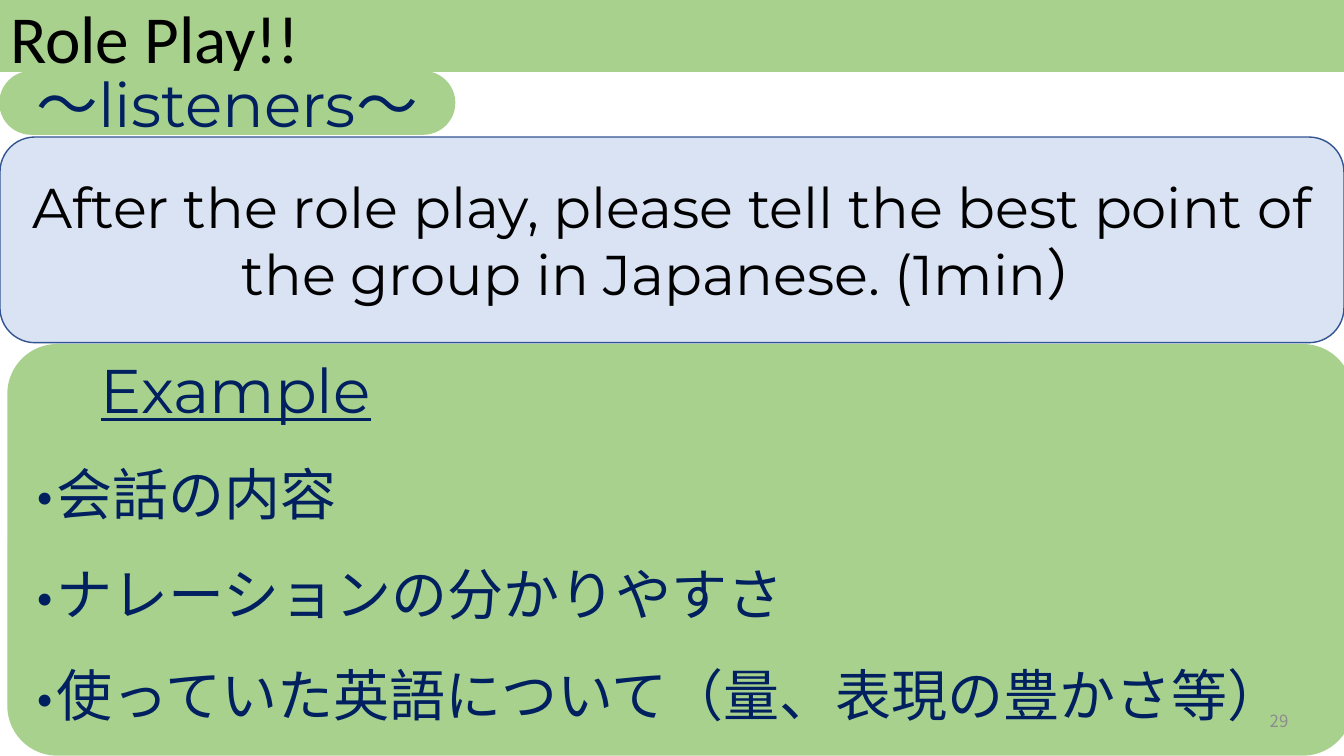
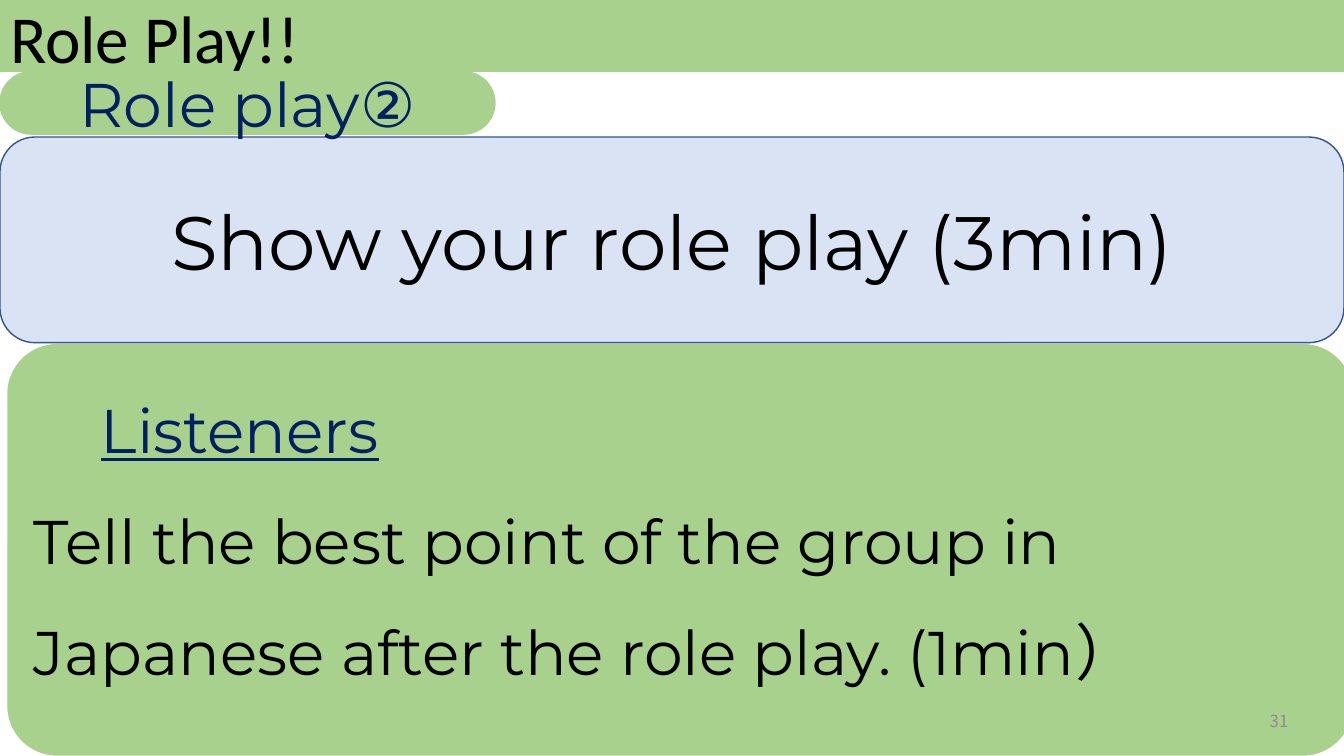
from dataclasses import dataclass

from lxml.etree import SubElement
from pptx import Presentation
from pptx.dml.color import RGBColor
from pptx.enum.shapes import MSO_SHAPE
from pptx.enum.text import MSO_ANCHOR, MSO_AUTO_SIZE, PP_ALIGN
from pptx.oxml.ns import qn
from pptx.util import Inches, Pt


@dataclass(frozen=True)
class Theme:
    green: str = "A9D18E"
    pale_blue: str = "DAE3F3"
    border_blue: str = "325491"
    navy: str = "002060"
    black: str = "000000"
    grey: str = "8C8C8C"
    title_font: str = "Calibri"
    text_font: str = "Montserrat"
    japanese_font: str = "Noto Sans CJK JP"
    title: int = 48
    heading: int = 44
    statement: int = 54
    text: int = 40
    number: int = 12


THEME = Theme()
WIDTH, HEIGHT = Inches(13.33), Inches(7.5)


@dataclass(frozen=True)
class Box:
    left: int
    top: int
    width: int
    height: int

    def inner(self, x, y, w, h):
        """Return an inner box given in percent of this box."""
        return Box(int(self.left + self.width * x / 100),
                   int(self.top + self.height * y / 100),
                   int(self.width * w / 100), int(self.height * h / 100))

    def corners(self):
        return self.left, self.top, self.width, self.height


PAGE = Box(0, 0, WIDTH, HEIGHT)
TITLE_BAND = PAGE.inner(0, 0, 100, 9.47)
TAB_ROW = PAGE.inner(0, 9.47, 100, 8.27)
TASK_BOX = PAGE.inner(0, 18.13, 100, 27.2)
DETAIL_PANEL = PAGE.inner(0.6, 45.6, 100, 54.27)
PAGE_NUMBER = PAGE.inner(74.1, 92.67, 22.5, 5.33)


def color(code):
    return RGBColor.from_string(code)


def paint(shape, fill, border):
    shape.fill.solid()
    shape.fill.fore_color.rgb = color(fill)
    shape.line.color.rgb = color(border)
    shape.line.width = Pt(1)


def style(paragraph, size, ink, font=THEME.text_font, align=PP_ALIGN.LEFT):
    paragraph.alignment = align
    paragraph.font.size = Pt(size)
    paragraph.font.color.rgb = color(ink)
    paragraph.font.name = font
    default_font = paragraph._p.get_or_add_pPr().find(qn("a:defRPr"))
    SubElement(default_font, qn("a:ea"), typeface=THEME.japanese_font)


def indent(paragraph, left, bullet=None):
    """Set the left indent, with a hanging bullet if one is given."""
    props = paragraph._p.get_or_add_pPr()
    props.set("marL", str(left))
    props.set("indent", str(-left if bullet else 0))
    default_font = props.find(qn("a:defRPr"))
    if bullet:
        marks = [SubElement(props, qn("a:buSzPct"), val="140000"),
                 SubElement(props, qn("a:buFont"), typeface=THEME.text_font),
                 SubElement(props, qn("a:buChar"), char=bullet)]
    else:
        marks = [SubElement(props, qn("a:buNone"))]
    for mark in marks:
        default_font.addprevious(mark)


def place(placeholder, box, anchor):
    placeholder.left, placeholder.top, placeholder.width, placeholder.height = box.corners()
    frame = placeholder.text_frame
    frame.auto_size = MSO_AUTO_SIZE.NONE
    frame.word_wrap = True
    frame.vertical_anchor = anchor
    return frame


def add_rounded(slide, box, fill, border, corner):
    shape = slide.shapes.add_shape(MSO_SHAPE.ROUNDED_RECTANGLE, *box.corners())
    shape.adjustments[0] = corner
    shape.shadow.inherit = False
    paint(shape, fill, border)
    return shape


def add_label(slide, box, text, size, ink, fill, border, corner):
    """Rounded box with centred text."""
    frame = add_rounded(slide, box, fill, border, corner).text_frame
    frame.word_wrap = True
    frame.vertical_anchor = MSO_ANCHOR.MIDDLE
    frame.text = text
    style(frame.paragraphs[0], size, ink, align=PP_ALIGN.CENTER)


def add_title(slide, box, text):
    title = slide.shapes.title
    frame = place(title, box, MSO_ANCHOR.TOP)
    paint(title, THEME.green, THEME.green)
    frame.text = text
    heading = frame.paragraphs[0]
    style(heading, THEME.title, THEME.black, THEME.title_font)
    heading.line_spacing = 0.9


def add_details(slide, box, heading, lines, ink, size, bullet):
    """Green panel with an underlined heading and its lines."""
    panel = add_rounded(slide, box, THEME.green, THEME.green, 0.12)
    body = slide.placeholders[1]
    body._element.addprevious(panel._element)
    frame = place(body, box.inner(1.9, 0, 96.2, 96), MSO_ANCHOR.MIDDLE)
    frame.margin_left = frame.margin_right = frame.margin_top = frame.margin_bottom = 0
    frame.text = "\n".join([heading, *lines])
    first, *rest = frame.paragraphs

    style(first, THEME.heading, THEME.navy)
    first.font.underline = True
    first.line_spacing = Pt(50)
    indent(first, int(box.width * 0.05))
    for line in rest:
        style(line, size, ink)
        line.line_spacing = Pt(size * 1.8)
        indent(line, int(box.width * 0.014) if bullet else 0, bullet)
    for paragraph in frame.paragraphs:
        paragraph.space_before = Pt(0)


def add_page_number(slide, box, number):
    frame = slide.shapes.add_textbox(*box.corners()).text_frame
    frame.word_wrap = True
    frame.vertical_anchor = MSO_ANCHOR.MIDDLE
    frame.text = number
    style(frame.paragraphs[0], THEME.number, THEME.grey, THEME.japanese_font, PP_ALIGN.RIGHT)


def add_activity(deck, tab, tab_share, task, task_size, details, number):
    slide = deck.slides.add_slide(deck.slide_layouts[1])
    add_title(slide, TITLE_BAND, "Role Play!!")
    add_label(slide, TASK_BOX, task, task_size, THEME.black,
              THEME.pale_blue, THEME.border_blue, 0.17)
    add_label(slide, TAB_ROW.inner(0, 0, tab_share, 100), tab, THEME.heading,
              THEME.navy, THEME.green, THEME.green, 0.5)
    add_details(slide, DETAIL_PANEL, **details)
    add_page_number(slide, PAGE_NUMBER, number)


def main():
    deck = Presentation()
    deck.slide_width, deck.slide_height = WIDTH, HEIGHT

    # What listeners do
    add_activity(
        deck, "～listeners～", 33.83,
        "After the role play, please tell the best point of the group in Japanese. (1min）",
        THEME.text,
        dict(heading="Example",
             lines=["会話の内容", "ナレーションの分かりやすさ",
                    "使っていた英語について（量、表現の豊かさ等）"],
             ink=THEME.navy, size=THEME.text, bullet="•"),
        "29")

    # Second performance
    add_activity(
        deck, "Role play②", 36.83, "Show your role play (3min)", THEME.statement,
        dict(heading="Listeners",
             lines=["Tell the best point of the group in Japanese after the role play. (1min）"],
             ink=THEME.black, size=THEME.heading, bullet=None),
        "31")

    deck.save("out.pptx")


if __name__ == "__main__":
    main()
